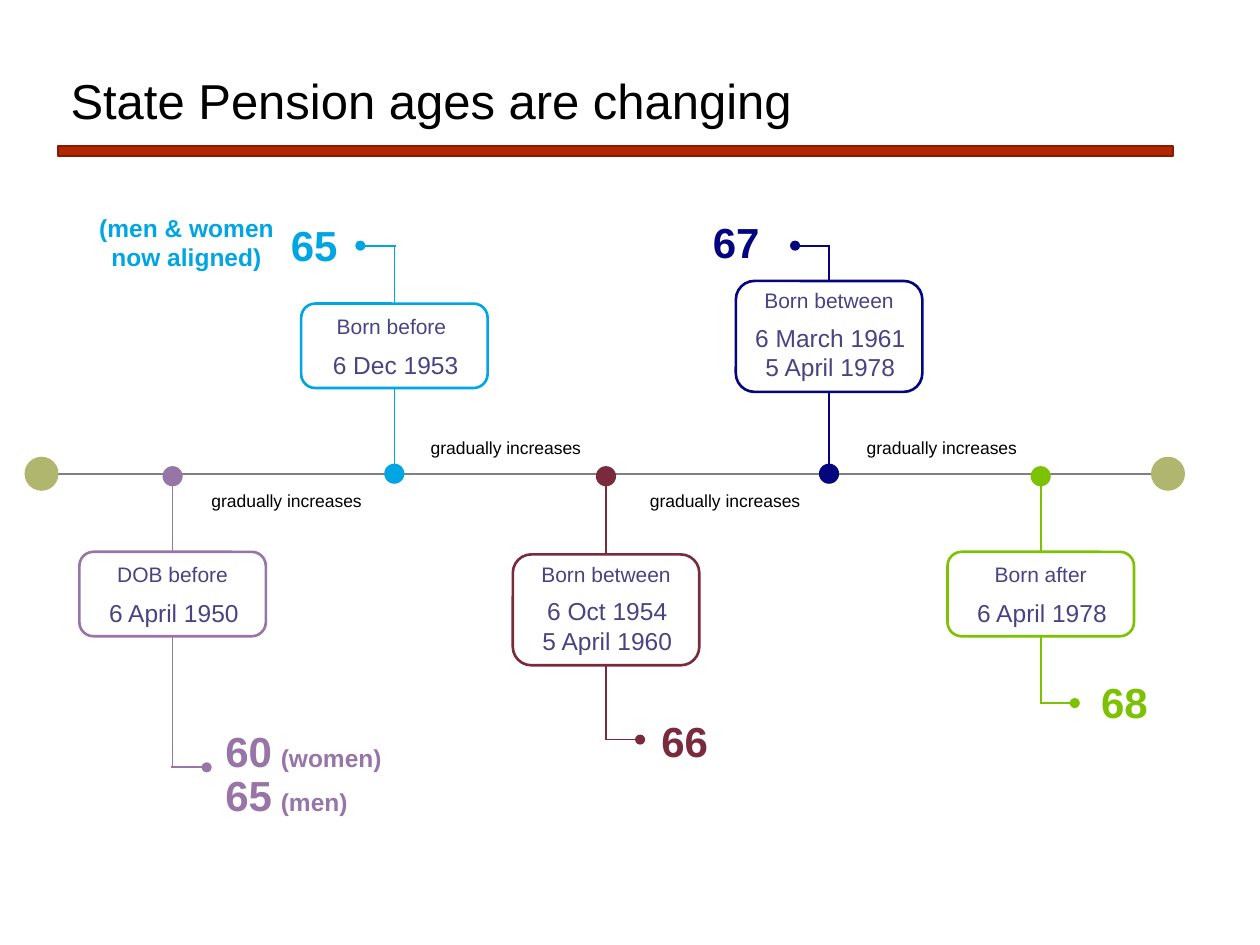
"""Build a timeline slide of State Pension ages on a grid of 100 columns by 75 rows."""
import itertools

import pptx
import pptx.dml.color
import pptx.enum.shapes
import pptx.enum.text
import pptx.oxml
import pptx.util

SHAPE = pptx.enum.shapes.MSO_SHAPE
ALIGN = pptx.enum.text.PP_ALIGN
FIT = pptx.enum.text.MSO_AUTO_SIZE
BLACK, WHITE, GREY, INK, OLIVE = "000000", "FFFFFF", "808080", "4A4383", "B1B66E"
PURPLE, CYAN, MAROON, NAVY, GREEN = "9875A7", "00A5E3", "7A2A3D", "05057D", "7DC202"
AXIS = 37.6


def rgb(value):
    return pptx.dml.color.RGBColor.from_string(value)


class Deck:
    def __init__(self, font="Arial", cols=100, rows=75):
        self.font = font
        self.prs = pptx.Presentation()
        self.prs.slide_width = pptx.util.Inches(10)
        self.prs.slide_height = pptx.util.Inches(7.5)
        self.col = self.prs.slide_width / cols
        self.row = self.prs.slide_height / rows
        self.s = self.prs.slides.add_slide(self.prs.slide_layouts[5])

    def place(self, x, y, w, h):
        return (round(x * self.col), round(y * self.row),
                round(w * self.col), round(h * self.row))

    def style(self, p, size, color, bold=False, align=ALIGN.LEFT):
        p.alignment = align
        p.font.name, p.font.size, p.font.bold = self.font, pptx.util.Pt(size), bold
        p.font.color.rgb = rgb(color)

    def title(self, text, box):
        sp = self.s.shapes.title
        sp.left, sp.top, sp.width, sp.height = self.place(*box)
        sp.text_frame.text = text
        sp.text_frame.vertical_anchor = pptx.enum.text.MSO_ANCHOR.MIDDLE
        p = sp.text_frame.paragraphs[0]
        p.line_spacing = 0.9
        self.style(p, 28, BLACK)

    def shape(self, kind, box, fill, line=None, width=1):
        sp = self.s.shapes.add_shape(kind, *self.place(*box))
        sp.shadow.inherit = False
        sp.fill.solid()
        sp.fill.fore_color.rgb = rgb(fill)
        if line:
            sp.line.color.rgb = rgb(line)
            sp.line.width = pptx.util.Pt(width)
        else:
            sp.line.fill.background()

    def dot(self, x, y, size, color):
        self.shape(SHAPE.OVAL, (x - size / 2, y - size / 2, size, size), color)

    def line(self, x1, y1, x2, y2, color):
        c = self.s.shapes.add_connector(
            pptx.enum.shapes.MSO_CONNECTOR.STRAIGHT,
            *self.place(x1, y1, x2, y2))
        c.line.color.rgb = rgb(color)
        c.line.width = pptx.util.Pt(1)
        c._element.spPr.append(pptx.oxml.parse_xml(
            '<a:effectLst xmlns:a="http://schemas.openxmlformats.org/drawingml/2006/main"/>'))

    def text(self, lines, box, size, color, bold=False, align=ALIGN.LEFT, wrap=True):
        tf = self.s.shapes.add_textbox(*self.place(*box)).text_frame
        tf.word_wrap = wrap
        tf.auto_size = FIT.SHAPE_TO_FIT_TEXT
        tf.text = "\n".join(lines)
        for p in tf.paragraphs:
            self.style(p, size, color, bold, align)
        return tf.paragraphs[0]

    def age(self, number, x, y, color, note=None):
        p = self.text([number], (x, y, 21.7 if note else 6.4, 5), 24, color, bold=True)
        if note:
            for text, size in ((" ", 18), (note, 14)):
                r = p.add_run()
                r.text, r.font.size = text, pptx.util.Pt(size)

    def milestone(self, x, color, top, bend, caption, dates):
        """Draw a stem with its elbow, its dated box and its dot on the axis."""
        below = bend > AXIS
        side = 1 if below else -1
        start = AXIS + 0.2 if below else AXIS
        self.line(x, start, x, bend, color)
        self.line(x + side * 2.9, bend, x - side * 0.1, bend, color)
        self.dot(x + side * 2.7, bend, 0.8, color)
        tall = len(dates) > 1
        height, inset, gap = (8.8, 0.05, 2.8) if tall else (6.7, 0.3, 2.9)
        left = x - 7.4
        self.shape(SHAPE.ROUNDED_RECTANGLE, (left, top, 14.8, height), WHITE, color, 1.5)
        self.text([caption], (left, top + inset, 14.8, 3), 12, INK, align=ALIGN.CENTER)
        self.text(dates, (left + 0.1, top + inset + gap, 14.8, height - 3.2), 14, INK,
                  align=ALIGN.CENTER)
        self.dot(x, start, 1.6, color)


MILESTONES = [
    (13.7, PURPLE, 43.8, 60.9, "DOB before", ["6 April 1950"]),
    (31.3, CYAN, 24.1, 19.5, "Born before ", ["6 Dec 1953"]),
    (48.1, MAROON, 44, 58.7, "Born between", ["6 Oct 1954", "5 April 1960"]),
    (65.8, NAVY, 22.3, 19.5, "Born between", ["6 March 1961", "5 April 1978"]),
    (82.6, GREEN, 43.8, 55.8, "Born after", ["6 April 1978"]),
]
AGES = [
    ("60", 16.9, 57.1, PURPLE, "(women)"),
    ("65", 16.9, 60.6, PURPLE, "(men)"),
    ("65", 22.1, 16.9, CYAN),
    ("66", 51.5, 56.3, MAROON),
    ("67", 55.6, 16.7, NAVY),
    ("68", 86.4, 53.2, GREEN),
]
INCREASES = [(15.8, 38.4), (33.2, 34.2), (50.6, 38.4), (67.8, 34.2)]


def main():
    deck = Deck()
    deck.title("State Pension ages are changing", (4.6, 4, 88.5, 8.4))
    deck.shape(SHAPE.RECTANGLE, (4.6, 11.6, 88.5, 0.8), "B22600", "841C00")
    stops = [3.2, *(m[0] for m in MILESTONES), 93.2]
    for x1, x2 in itertools.pairwise(stops):
        deck.line(x1, AXIS, x2, AXIS, GREY)
    for x in (3.3, 92.7):
        deck.dot(x, AXIS, 2.7, OLIVE)
    for milestone in MILESTONES:
        deck.milestone(*milestone)
    for age in AGES:
        deck.age(*age)
    deck.text(["(men & women now aligned)"], (4.9, 16.4, 19.8, 5.7), 14, CYAN,
              bold=True, align=ALIGN.CENTER)
    for x, y in INCREASES:
        deck.text(["gradually increases"], (x, y, 14, 2.7), 10, BLACK, wrap=False)
    deck.prs.save("out.pptx")


if __name__ == "__main__":
    main()
